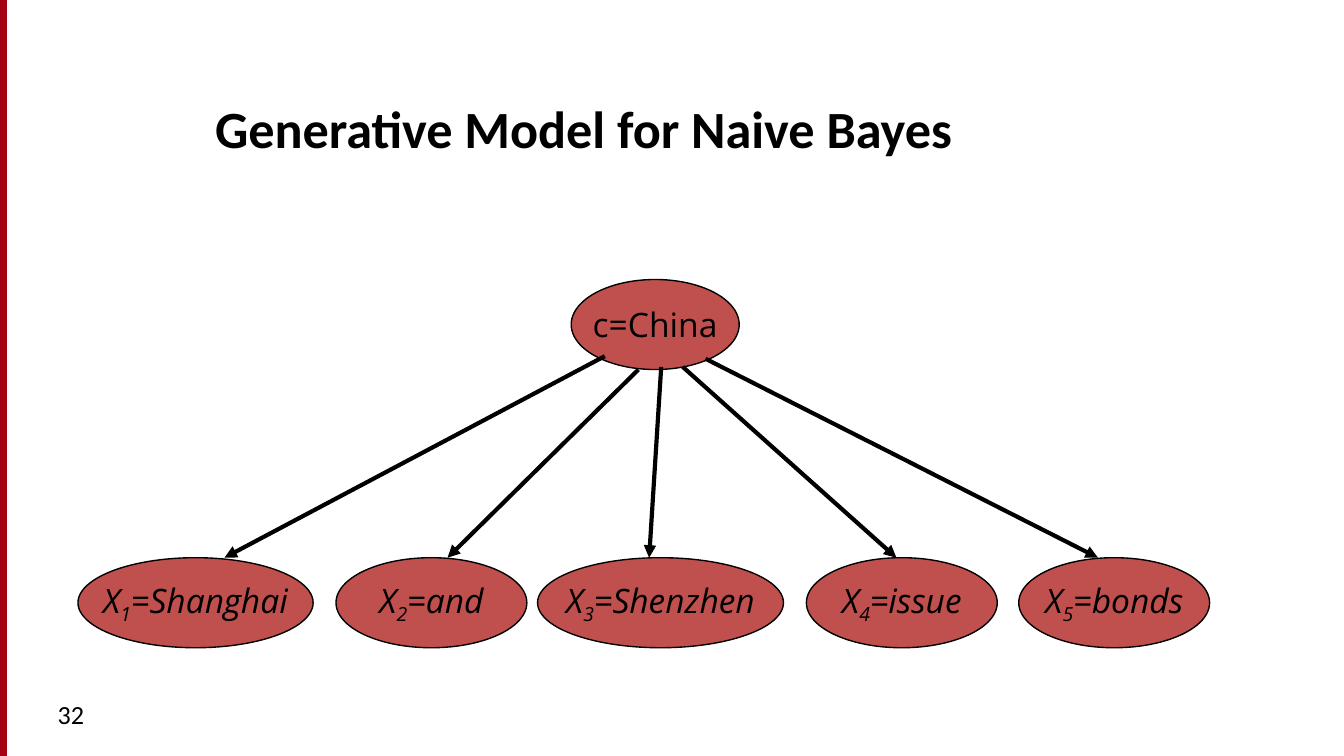
from pptx import Presentation
from pptx.dml.color import RGBColor
from pptx.enum.shapes import MSO_CONNECTOR as CONN, MSO_SHAPE as SHAPE
from pptx.enum.text import MSO_ANCHOR as ANCHOR, PP_ALIGN as ALIGN
from pptx.oxml.ns import qn
from pptx.util import Inches, Pt
from lxml.etree import SubElement

TITLE = "Generative Model for Naive Bayes"
NUMBER = "32"
CLASS_NODE = ("c=China", 4.25, 1.25)
WORDS = [
    ("Shanghai", 0.58, 1.75, (4.5, 2.65), 1.67),
    ("and", 2.5, 1.42, (4.75, 2.75), 3.33),
    ("Shenzhen", 4, 1.83, (4.92, 2.73), 4.83),
    ("issue", 6, 1.42, (5.08, 2.73), 6.67),
    ("bonds", 7.58, 1.42, (5.25, 2.67), 8.17),
]
CLASS_TOP, WORD_TOP, NODE_HEIGHT = 2.08, 4.15, 0.67
COLORS = {"bar": "A40508", "bar_line": "A4001D", "node": "C0504D", "ink": "000000"}
TITLE_FONT = {"name": "Calibri", "size": Pt(28), "bold": True}
NUMBER_FONT = {"name": "Calibri", "size": Pt(14)}
CLASS_FONT = {"name": "Open Sans", "size": Pt(18)}
WORD_FONT = {**CLASS_FONT, "italic": True}


def rgb(name):
    return RGBColor.from_string(COLORS[name])


def add_run(p, text, font, baseline=None):
    r = p.add_run()
    r.text = text
    for key, value in font.items():
        setattr(r.font, key, value)
    r.font.color.rgb = rgb("ink")
    if baseline:
        r.font._element.set("baseline", str(baseline))


def add_box(slide, kind, box, fill, line):
    sp = slide.shapes.add_shape(kind, *map(Inches, box))
    sp.shadow.inherit = False
    sp.fill.solid()
    sp.fill.fore_color.rgb = rgb(fill)
    sp.line.color.rgb = rgb(line)
    sp.line.width = Pt(0.75)
    return sp


def add_node(slide, left, top, width):
    sp = add_box(slide, SHAPE.OVAL, (left, top, width, NODE_HEIGHT), "node", "ink")
    tf = sp.text_frame
    tf.word_wrap = False
    tf.vertical_anchor = ANCHOR.MIDDLE
    p = tf.paragraphs[0]
    p.alignment = ALIGN.CENTER
    return p


def add_arrow(slide, start, end):
    cx = slide.shapes.add_connector(CONN.STRAIGHT, *map(Inches, start + end))
    cx.line.color.rgb = rgb("ink")
    cx.line.width = Pt(2.25)
    SubElement(cx.line._get_or_add_ln(), qn("a:tailEnd"), type="triangle")
    SubElement(cx._element.spPr, qn("a:effectLst"))


def main():
    """Build the Naive Bayes generative model slide."""
    prs = Presentation()
    prs.slide_width = Inches(10)
    prs.slide_height = prs.slide_width * 9 // 16
    slide = prs.slides.add_slide(prs.slide_layouts[5])
    bar = add_box(slide, SHAPE.RECTANGLE, (0, 0, 0.05, 1), "bar", "bar_line")
    bar.height = prs.slide_height

    title = slide.shapes.title
    title.left, title.top, title.width, title.height = map(Inches, (1.5, 0.42, 8.17, 0.81))
    title.text_frame.vertical_anchor = ANCHOR.BOTTOM
    p = title.text_frame.paragraphs[0]
    p.alignment = ALIGN.LEFT
    add_run(p, TITLE, TITLE_FONT)

    number = slide.shapes.add_textbox(*map(Inches, (0.33, 5.15, 2.17, 0.38)))
    number.text_frame.word_wrap = True
    number.text_frame.vertical_anchor = ANCHOR.TOP
    add_run(number.text_frame.paragraphs[0], NUMBER, NUMBER_FONT)

    text, left, width = CLASS_NODE
    add_run(add_node(slide, left, CLASS_TOP, width), text, CLASS_FONT)
    for i, (word, left, width, start, end_x) in enumerate(WORDS, 1):
        p = add_node(slide, left, WORD_TOP, width)
        add_run(p, "X", WORD_FONT)
        add_run(p, str(i), WORD_FONT, -25000)
        add_run(p, f"={word}", WORD_FONT)
        add_arrow(slide, start, (end_x, WORD_TOP))

    prs.save("out.pptx")


if __name__ == "__main__":
    main()
